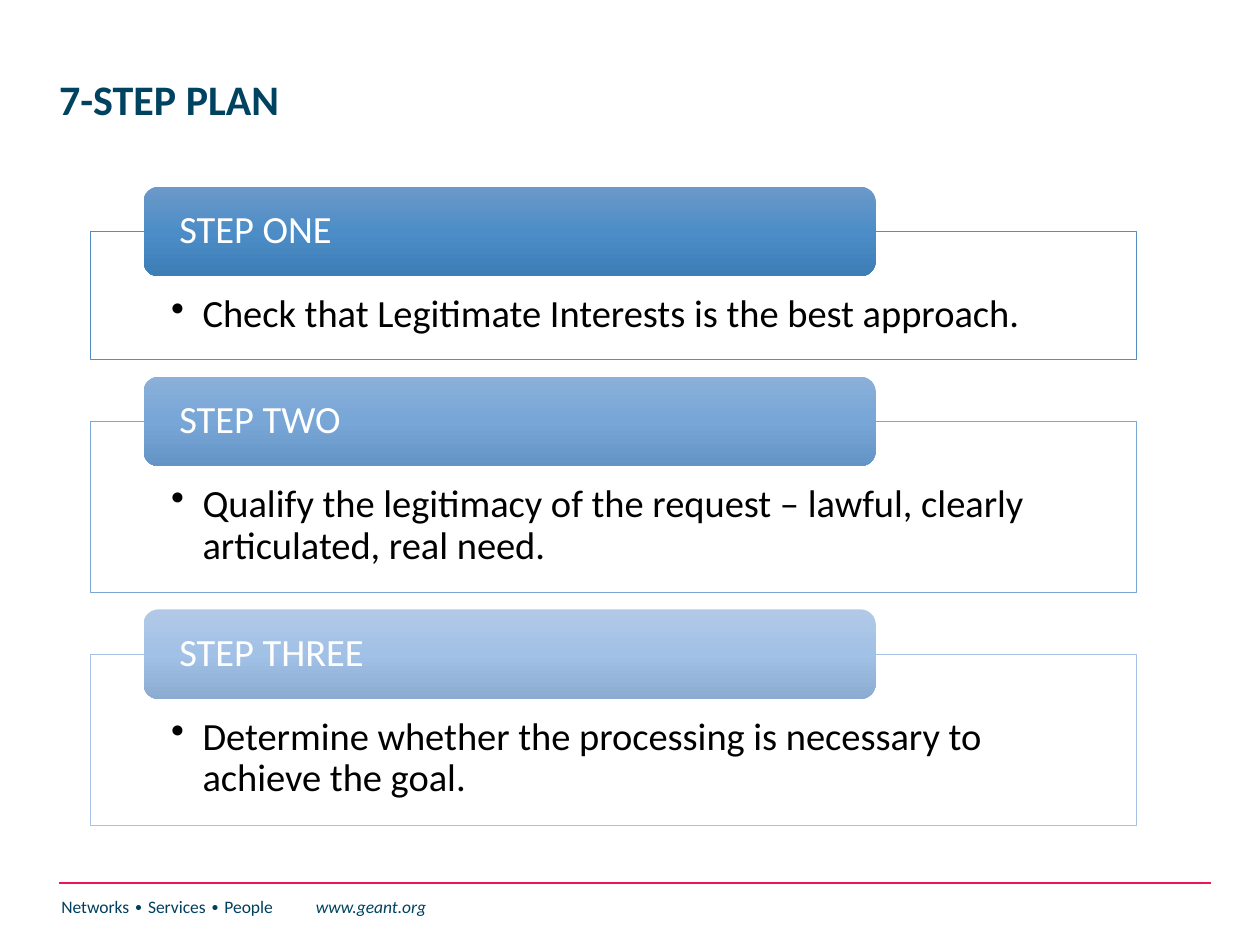
from lxml.etree import SubElement
from pptx import Presentation
from pptx.dml.color import RGBColor
from pptx.enum.shapes import MSO_CONNECTOR, MSO_SHAPE
from pptx.enum.text import MSO_ANCHOR, PP_ALIGN
from pptx.oxml import parse_xml
from pptx.oxml.ns import nsdecls, qn
from pptx.util import Pt

HUES = {"navy": "004361", "ink": "003F5E", "pink": "ED1556",
        "white": "FFFFFF", "black": "000000"}

# Heading, body, card height, card line, gradient from top to bottom
STEPS = [
    ("STEP ONE", "Check that Legitimate Interests is the best approach.",
     73.4, "538DC1", ("6B99C9", "4D8DC7", "3E7EB7")),
    ("STEP TWO", "Qualify the legitimacy of the request – lawful, clearly "
     "articulated, real need.",
     97.9, "7BA6D3", ("8BB0D9", "77A6D7", "6493C5")),
    ("STEP THREE", "Determine whether the processing is necessary to "
     "achieve the goal.",
     97.9, "A5C1E3", ("B1C9E7", "A2C1E6", "8CABD1")),
]


def rgb(hue):
    return RGBColor.from_string(HUES.get(hue, hue))


class Deck:
    face = "Calibri"

    def __init__(self, wide, high):
        self.prs = Presentation()
        self.prs.slide_width, self.prs.slide_height = Pt(wide), Pt(high)
        self.slide = self.prs.slides.add_slide(self.prs.slide_layouts[6])
        self.shapes = self.slide.shapes

    def font(self, run, size, hue, bold=False, slant=False):
        font = run.font
        font.name, font.size = self.face, Pt(size)
        font.bold, font.italic = bold, slant
        font.color.rgb = rgb(hue)

    def label(self, shape, text, size, hue, pad, anchor, bold=False):
        frame = shape.text_frame
        frame.text = text
        frame.word_wrap = True
        frame.vertical_anchor = anchor
        (frame.margin_left, frame.margin_top,
         frame.margin_right, frame.margin_bottom) = map(Pt, pad)
        para = frame.paragraphs[0]
        para.alignment = PP_ALIGN.LEFT
        para.line_spacing = 0.9
        self.font(para.runs[0], size, hue, bold)
        return para

    def title(self, text, box):
        shape = self.shapes.add_textbox(*map(Pt, box))
        self.label(shape, text, 24, "navy", (7.2, 3.6, 7.2, 3.6),
                   MSO_ANCHOR.MIDDLE, bold=True)

    def card(self, text, box, edge):
        shape = self.shapes.add_shape(MSO_SHAPE.RECTANGLE, *map(Pt, box))
        shape.shadow.inherit = False
        shape.fill.solid()
        shape.fill.fore_color.rgb = rgb("white")
        tone = shape._element.spPr.find(".//" + qn("a:srgbClr"))
        SubElement(tone, qn("a:alpha"), val="90000")
        shape.line.color.rgb = rgb(edge)
        shape.line.width = Pt(0.5)
        para = self.label(shape, text, 22, "black", (46, 36, 46, 12),
                          MSO_ANCHOR.TOP)
        props = para._p.get_or_add_pPr()
        props.set("marL", str(Pt(18)))
        props.set("indent", str(-Pt(18)))
        SubElement(props, qn("a:buChar"), char="•")

    def head(self, text, box, hues):
        shape = self.shapes.add_shape(MSO_SHAPE.ROUNDED_RECTANGLE,
                                      *map(Pt, box))
        shape.shadow.inherit = False
        shape.line.fill.background()
        stops = "".join(
            f'<a:gs pos="{50000 * i}"><a:srgbClr val="{hue}"/></a:gs>'
            for i, hue in enumerate(hues))
        grad = parse_xml(
            f'<a:gradFill {nsdecls("a")} rotWithShape="1">'
            f'<a:gsLst>{stops}</a:gsLst><a:lin ang="5400000" scaled="0"/>'
            '</a:gradFill>')
        shape._element.spPr.find(qn("a:prstGeom")).addnext(grad)
        self.label(shape, text, 22, "white", (18, 0, 18, 0),
                   MSO_ANCHOR.MIDDLE)

    def rule(self, left, right, y):
        line = self.shapes.add_connector(
            MSO_CONNECTOR.STRAIGHT, Pt(left), Pt(y), Pt(right), Pt(y))
        line.line.color.rgb = rgb("pink")
        line.line.width = Pt(1)
        SubElement(line._element.spPr, qn("a:effectLst"))

    def footer(self, motto, site, box, stop):
        frame = self.shapes.add_textbox(*map(Pt, box)).text_frame
        frame.word_wrap = True
        para = frame.paragraphs[0]
        tabs = SubElement(para._p.get_or_add_pPr(), qn("a:tabLst"))
        SubElement(tabs, qn("a:tab"), pos=str(Pt(stop)), algn="l")
        for text, hue, slant in ((motto + "\t", "ink", False),
                                 (site, "navy", True)):
            run = para.add_run()
            run.text = text
            self.font(run, 10, hue, slant=slant)


def main():
    deck = Deck(720, 540)

    # Footer band
    deck.rule(33.8, 692, 504.7)
    deck.footer("Networks ∙ Services ∙ People", "www.geant.org",
                (28, 508.3, 245.5, 31.7), 145.4)

    # Title
    deck.title("7-STEP PLAN", (26.7, 5.8, 567.4, 104.4))

    # Stacked steps, each heading straddling the top of its card
    top, lap, gap = 106.7, 25.6, 9.5
    for name, text, high, edge, hues in STEPS:
        deck.card(text, (51.8, top + lap, 597.6, high), edge)
        deck.head(name, (82, top, 418.3, 2 * lap), hues)
        top += lap + high + gap

    deck.prs.save("out.pptx")


if __name__ == "__main__":
    main()
